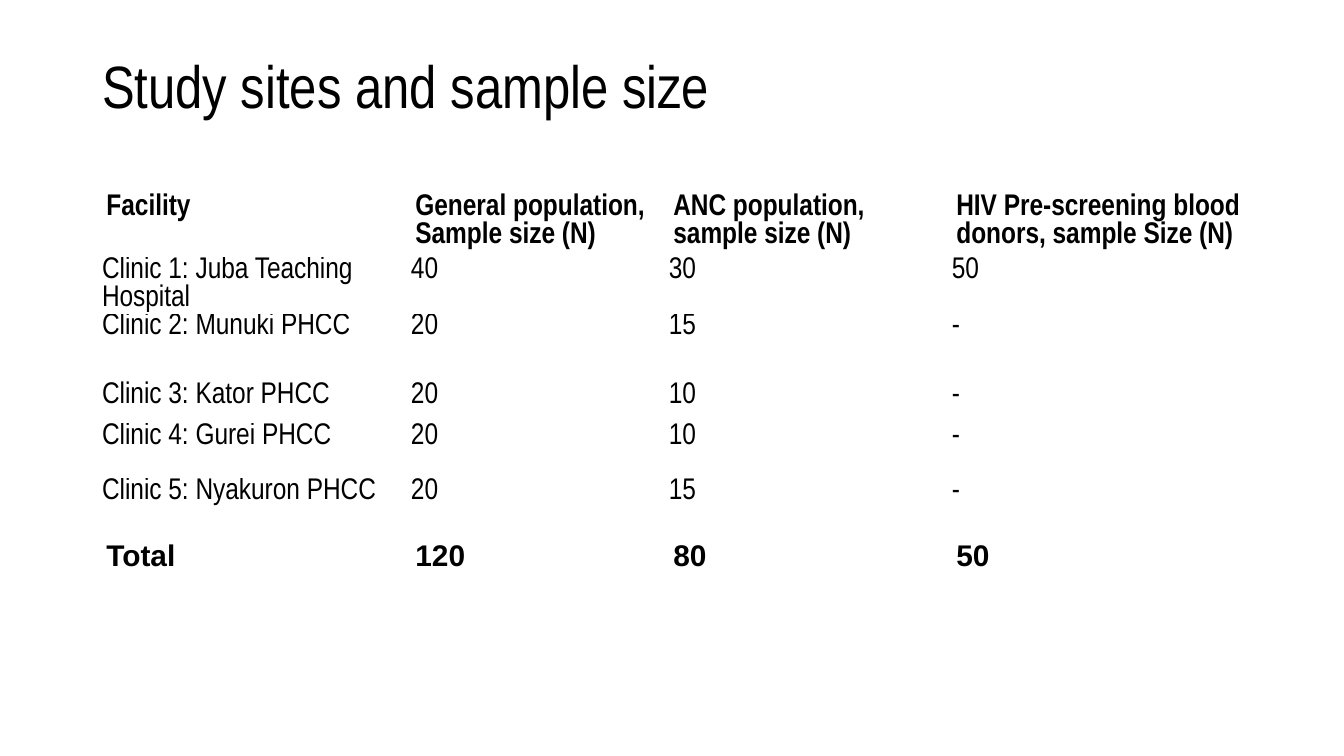
from dataclasses import dataclass

from pptx import Presentation
from pptx import util as u
from pptx.dml.color import RGBColor
from pptx.enum import text

SCALE = 914400 / 134.4


def px(n):
    return u.Emu(round(n * SCALE))


@dataclass(frozen=True)
class Theme:
    ink: RGBColor = RGBColor(0, 0, 0)
    narrow: str = "Arial Narrow"
    wide: str = "Arial"
    head: int = 32
    body: int = 16


class Deck:
    def __init__(self, theme, width, height):
        self.theme = theme
        self.prs = Presentation()
        self.prs.slide_width, self.prs.slide_height = px(width), px(height)
        self.slide = self.prs.slides.add_slide(self.prs.slide_layouts[5])

    def style(self, para, size, face, bold=False):
        para.alignment = text.PP_ALIGN.LEFT
        font = para.font
        font.name, font.size, font.bold = face, u.Pt(size), bold
        font.color.rgb = self.theme.ink

    def title(self, words, left, top, width, height):
        box = self.slide.shapes.title
        box.left, box.top = px(left), px(top)
        box.width, box.height = px(width), px(height)
        frame = box.text_frame
        frame.text = words
        frame.word_wrap = True
        frame.auto_size = text.MSO_AUTO_SIZE.NONE
        frame.vertical_anchor = text.MSO_ANCHOR.MIDDLE
        frame.margin_left = frame.margin_right = px(9)
        frame.margin_top = frame.margin_bottom = px(5)
        para = frame.paragraphs[0]
        para.line_spacing = 0.9
        self.style(para, self.theme.head, self.theme.narrow)

    def cell(self, cell, words, face, bold, tight, lead):
        """Fill one cell; a tight cell has no margin above or below."""
        cell.text = words
        cell.fill.background()
        if tight:
            cell.margin_left = cell.margin_right = px(9)
            cell.margin_top = cell.margin_bottom = 0
        para = cell.text_frame.paragraphs[0]
        if lead:
            para.line_spacing = lead
        self.style(para, self.theme.body, face, bold)

    def table(self, rows, left, top, widths, height, leads):
        """Draw rows with a bold first and last row; leads maps row to line spacing."""
        last = len(rows) - 1
        grid = self.slide.shapes.add_table(
            len(rows), len(widths), px(left), px(top),
            px(sum(widths)), px(height * len(rows))).table
        grid.first_row = grid.horz_banding = False
        for col, width in zip(grid.columns, widths):
            col.width = px(width)
        for r, row in enumerate(rows):
            grid.rows[r].height = px(height)
            edge = r in (0, last)
            face = self.theme.wide if r == last else self.theme.narrow
            for c, words in enumerate(row):
                self.cell(grid.cell(r, c), words, face, edge, not edge, leads.get(r))


SITES = [
    ("Facility", "General population, Sample size (N)",
     "ANC population, sample size (N)",
     "HIV Pre-screening blood donors, sample Size (N)"),
    ("Clinic 1: Juba Teaching Hospital", "40", "30", "50"),
    ("Clinic 2: Munuki PHCC", "20", "15", "-"),
    ("Clinic 3: Kator PHCC", "20", "10", "-"),
    ("Clinic 4: Gurei PHCC", "20", "10", "-"),
    ("Clinic 5: Nyakuron PHCC", "20", "15", "-"),
    ("Total", "120", "80", "50"),
]


def main():
    deck = Deck(Theme(), 1344, 756)
    deck.title("Study sites and sample size", 93, 39, 1159, 101)
    deck.table(SITES, 93, 187, (309, 258, 283, 328), 55, {3: 1.5})
    deck.prs.save("out.pptx")


if __name__ == "__main__":
    main()
